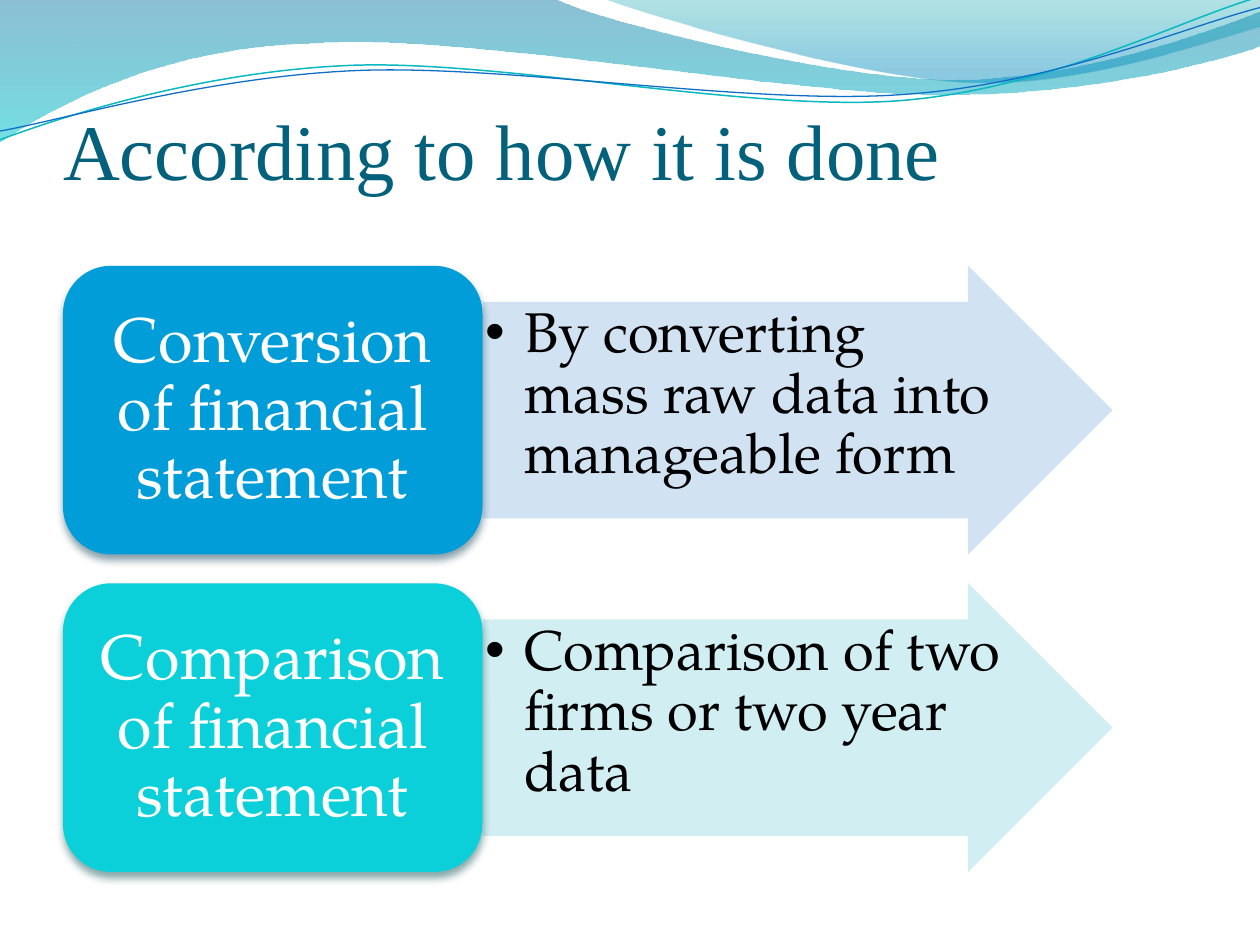
from math import cos, radians, sin

from lxml import etree
from pptx import Presentation
from pptx.dml.color import RGBColor
from pptx.enum.shapes import MSO_SHAPE
from pptx.enum.text import MSO_ANCHOR, MSO_AUTO_SIZE, PP_ALIGN
from pptx.oxml.ns import qn
from pptx.util import Inches, Pt

BODY_FONT, TITLE_FONT = "TeX Gyre Pagella", "Times New Roman"
LINE_TILT = 357.3

# Each wave is a start point followed by line ends (2 numbers) or curves (6 numbers)
BACK_WAVE = [
    (0, 0), (4.4, -0.01), (4.76, 0.17, 6.64, 0.63, 7.58, 0.63),
    (8.53, 0.63, 9.58, 0.26, 10, 0.09), (10.01, 0.36),
    (9.83, 0.44, 8.7, 0.76, 7.46, 0.75), (6.22, 0.75, 3.82, 0.28, 2.57, 0.34),
    (1.29, 0.36, 0.46, 0.83, -0.01, 1.13), (0, 0)]
FRONT_WAVE = [
    (4.79, -0.01), (5.09, 0.11, 6.82, 0.62, 7.69, 0.65),
    (8.56, 0.69, 9.61, 0.32, 10, 0.21), (10, 0), (4.79, -0.01)]
TEAL_LINE = [
    (0, 1.11), (0.48, 0.93, 1.58, 0.57, 2.77, 0.52),
    (3.95, 0.47, 5.93, 0.89, 7.13, 0.8), (8.33, 0.71, 9.38, 0.15, 9.98, -0.02)]
BLUE_LINE = [
    (0, 1.04), (0.47, 0.96, 1.64, 0.61, 2.83, 0.56),
    (4.03, 0.51, 5.97, 0.84, 7.17, 0.75), (8.36, 0.67, 9.41, 0.21, 10, 0.06)]

# Heading, explanation, box colour, shadow colour, arrow colour
ROWS = [
    ("Conversion of financial statement",
     "By converting mass raw data into manageable form",
     "009DD9", "00374C", "CCDFF1"),
    ("Comparison of financial statement",
     "Comparison of two firms or two year data",
     "0BD0D9", "024B4E", "CCEDF1")]


def rgb(value):
    return RGBColor.from_string(value)


def add_node(parent, tag, **attrs):
    return etree.SubElement(parent, qn(tag), {k: str(v) for k, v in attrs.items()})


def add_color(parent, color, opacity):
    node = add_node(parent, "a:srgbClr", val=color)
    add_node(node, "a:alpha", val=opacity * 1000)


def add_wave(s, segments, box, close, rotation=0):
    """A freeform in the given frame, with true curves."""
    left, top, width, height = box
    mid_x, mid_y = left + width / 2, top + height / 2
    turn = radians(-rotation)

    def local(x, y):
        dx, dy = x - mid_x, y - mid_y
        return (Inches(dx * cos(turn) - dy * sin(turn) + width / 2),
                Inches(dx * sin(turn) + dy * cos(turn) + height / 2))

    outline = [[local(*seg[i:i + 2]) for i in range(0, len(seg), 2)] for seg in segments]
    builder = s.shapes.build_freeform(*outline[0][0])
    builder.add_line_segments([points[-1] for points in outline[1:]], close=close)
    sp = builder.convert_to_shape()
    sp.left, sp.top, sp.width, sp.height = (Inches(v) for v in box)
    sp.rotation = rotation
    sp.shadow.inherit = False

    # Turn the straight segments into curves
    path = next(sp._element.iter(qn("a:path")))
    path.set("w", str(Inches(width)))
    path.set("h", str(Inches(height)))
    for step, points in zip(list(path), outline):
        if len(points) == 3:
            step.tag = qn("a:cubicBezTo")
        for pt in list(step):
            step.remove(pt)
        for x, y in points:
            add_node(step, "a:pt", x=x, y=y)
    return sp


def add_filled_wave(s, segments, box, stops):
    sp = add_wave(s, segments, box, True)
    sp.line.fill.background()
    sp.fill.solid()
    solid = sp._element.spPr.find(qn("a:solidFill"))
    grad = etree.Element(qn("a:gradFill"))
    stop_list = add_node(grad, "a:gsLst")
    for position, color, opacity in stops:
        add_color(add_node(stop_list, "a:gs", pos=position * 1000), color, opacity)
    add_node(grad, "a:lin", ang=90 * 60000, scaled=0)
    solid.getparent().replace(solid, grad)


def add_line_wave(s, segments, box, color, width):
    sp = add_wave(s, segments, box, False, LINE_TILT)
    sp.fill.background()
    sp.line.color.rgb = rgb(color)
    sp.line.width = Pt(width)


def set_frame(tf, anchor, left, top, right, bottom):
    tf.word_wrap = True
    tf.auto_size = MSO_AUTO_SIZE.NONE
    tf.vertical_anchor = anchor
    tf.margin_left, tf.margin_top = Inches(left), Inches(top)
    tf.margin_right, tf.margin_bottom = Inches(right), Inches(bottom)


def add_text(p, text, size, font, color, align):
    p.alignment = align
    r = p.add_run()
    r.text = text
    r.font.size = Pt(size)
    r.font.name = font
    r.font.color.rgb = rgb(color)


def add_block(s, kind, left, top, width, height, color):
    sp = s.shapes.add_shape(kind, Inches(left), Inches(top), Inches(width), Inches(height))
    sp.shadow.inherit = False
    sp.fill.solid()
    sp.fill.fore_color.rgb = rgb(color)
    sp.line.fill.background()
    return sp


def add_arrow(s, top, text, color):
    sp = add_block(s, MSO_SHAPE.RIGHT_ARROW, 3.83, top, 5, 2.29, color)
    sp.adjustments[0], sp.adjustments[1] = 0.75, 0.5
    fill_color = sp._element.spPr.find(qn("a:solidFill"))[0]
    add_node(fill_color, "a:alpha", val=90000)
    set_frame(sp.text_frame, MSO_ANCHOR.TOP, 0.02, 0.02, 0.02, 0.02)
    p = sp.text_frame.paragraphs[0]
    p.level = 1
    p.line_spacing = 0.9
    pPr = p._p.get_or_add_pPr()
    pPr.set("marL", str(Inches(0.31)))
    pPr.set("indent", str(Inches(-0.31)))
    add_node(pPr, "a:buFont", typeface="Arial")
    add_node(pPr, "a:buChar", char="•")
    add_text(p, text, 32, BODY_FONT, "000000", PP_ALIGN.LEFT)


def add_heading_box(s, top, text, color, shadow):
    sp = add_block(s, MSO_SHAPE.ROUNDED_RECTANGLE, 0.5, top, 3.33, 2.29, color)
    effects = sp._element.spPr.find(qn("a:effectLst"))
    outer = add_node(effects, "a:outerShdw", blurRad=Pt(4.5), dist=Pt(3),
                     dir=90 * 60000, rotWithShape=0)
    add_color(outer, shadow, 48)
    set_frame(sp.text_frame, MSO_ANCHOR.MIDDLE, 0.15, 0.07, 0.15, 0.07)
    p = sp.text_frame.paragraphs[0]
    p.line_spacing = 0.9
    add_text(p, text, 36, BODY_FONT, "FFFFFF", PP_ALIGN.CENTER)


def add_title(s, text):
    title = s.shapes.title
    title.left, title.top = Inches(0.5), Inches(0.77)
    title.width, title.height = Inches(9), Inches(0.79)
    set_frame(title.text_frame, MSO_ANCHOR.BOTTOM, 0, 0.05, 0, 0)
    add_text(title.text_frame.paragraphs[0], text, 45, TITLE_FONT, "04617B", PP_ALIGN.LEFT)
    s.shapes._spTree.append(title._element)  # in front of the waves


def main():
    prs = Presentation()
    prs.slide_width, prs.slide_height = Inches(10), Inches(7.5)
    s = prs.slides.add_slide(prs.slide_layouts[5])

    # Wave decoration
    add_filled_wave(s, BACK_WAVE, (-0.01, -0.01, 10.02, 1.14),
                    [(0, "0074A1", 45), (100, "00C6CF", 55)])
    add_filled_wave(s, FRONT_WAVE, (4.79, -0.01, 5.21, 0.7),
                    [(0, "00A1A9", 30), (80, "008BBF", 45)])
    add_line_wave(s, TEAL_LINE, (-0.02, 0.22, 10.02, 0.71), "0AB8BF", 0.85)
    add_line_wave(s, BLUE_LINE, (-0.02, 0.3, 10.03, 0.58), "0F6FC6", 0.75)

    add_title(s, "According to how it is done")

    # One arrow and heading box per row
    for i, (heading, detail, color, shadow, tint) in enumerate(ROWS):
        top = 2.11 + i * 2.52
        add_arrow(s, top, detail, tint)
        add_heading_box(s, top, heading, color, shadow)

    prs.save("out.pptx")


if __name__ == "__main__":
    main()
